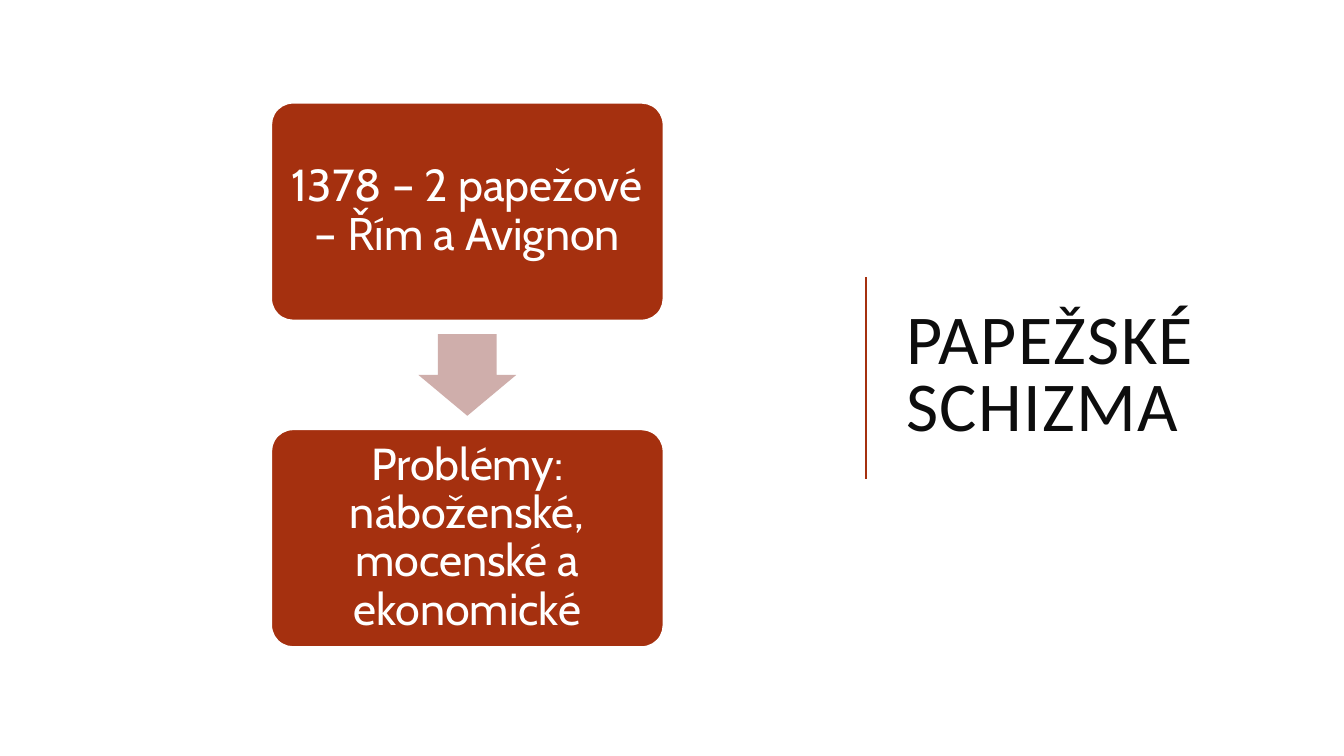
import dataclasses
import pptx
import pptx.util
import pptx.dml.color
import pptx.enum.shapes
import pptx.enum.text
import pptx.oxml.ns
import lxml.etree

Inches = pptx.util.Inches
Pt = pptx.util.Pt
Shape = pptx.enum.shapes.MSO_SHAPE
Align = pptx.enum.text.PP_ALIGN
Anchor = pptx.enum.text.MSO_ANCHOR


@dataclasses.dataclass(frozen=True)
class Theme:
    rust: str = "A5300F"
    rose: str = "CFAEAB"
    white: str = "FFFFFF"
    ink: str = "0D0D0D"
    head: str = "Calibri"
    body: str = "Cabin"
    big: int = 50
    mid: int = 32


def shade(text):
    return pptx.dml.color.RGBColor.from_string(text)


def apply(item, form):
    for name, value in form.items():
        setattr(item, name, value)


class Deck:
    def __init__(self, theme):
        self.theme = theme
        self.file = pptx.Presentation()
        apply(self.file, {"slide_width": Inches(13.33), "slide_height": Inches(7.5)})
        self.slide = self.file.slides.add_slide(self.file.slide_layouts[5])

    def label(self, shape, text, font, size, color, align, space, inset):
        frame = shape.text_frame
        frame.text = text
        apply(frame, {"word_wrap": True, "vertical_anchor": Anchor.MIDDLE,
                      "auto_size": pptx.enum.text.MSO_AUTO_SIZE.NONE})
        apply(frame, {f"margin_{side}": Inches(gap) for side, gap in inset.items()})
        para = frame.paragraphs[0]
        apply(para, {"alignment": align, "line_spacing": space})
        run = para.runs[0]
        apply(run.font, {"name": font, "size": Pt(size)})
        run.font.color.rgb = shade(color)
        return run

    def title(self, text, x, y, w, h):
        shape = self.slide.shapes.title
        apply(shape, {"left": Inches(x), "top": Inches(y),
                      "width": Inches(w), "height": Inches(h)})
        look = self.theme
        inset = {"left": 0.1, "right": 0.1, "top": 0.05, "bottom": 0.05}
        run = self.label(shape, text, look.head, look.big, look.ink,
                         Align.LEFT, 0.8, inset)
        run._r.get_or_add_rPr().set("spc", "100")

    def rule(self, x, start, end):
        line = self.slide.shapes.add_connector(
            pptx.enum.shapes.MSO_CONNECTOR.STRAIGHT,
            Inches(x), Inches(start), Inches(x), Inches(end))
        line.line.color.rgb = shade(self.theme.rust)
        line.line.width = Pt(1.5)
        lxml.etree.SubElement(line._element.spPr, pptx.oxml.ns.qn("a:effectLst"))

    def shape(self, kind, x, y, w, h, fill, bends):
        shape = self.slide.shapes.add_shape(
            kind, Inches(x), Inches(y), Inches(w), Inches(h))
        shape.shadow.inherit = False
        shape.fill.solid()
        shape.fill.fore_color.rgb = shade(fill)
        for spot, bend in enumerate(bends):
            shape.adjustments[spot] = bend
        return shape

    def card(self, text, x, y, w, h):
        look = self.theme
        shape = self.shape(Shape.ROUNDED_RECTANGLE, x, y, w, h, look.rust, [0.1])
        shape.line.color.rgb = shade(look.white)
        shape.line.width = Pt(1.25)
        inset = dict.fromkeys(["left", "right", "top", "bottom"], 0.13)
        self.label(shape, text, look.body, look.mid, look.white,
                   Align.CENTER, 0.9, inset)

    def arrow(self, x, y, w, h):
        shape = self.shape(Shape.RIGHT_ARROW, x, y, w, h, self.theme.rose, [0.6, 0.5])
        shape.rotation = 90
        shape.line.fill.background()


def main():
    deck = Deck(Theme())
    deck.title("PAPEŽSKÉ SCHIZMA", 8.89, 0.7, 3.8, 6.09)
    deck.rule(8.59, 4.75, 2.75)
    left, top, wide, high, step = 2.69, 1.02, 3.89, 2.16, 3.24
    cards = ["1378 – 2 papežové – Řím a Avignon",
             "Problémy: náboženské, mocenské a ekonomické"]
    for spot, text in enumerate(cards):
        deck.card(text, left, top + spot * step, wide, high)
    long, broad = 0.81, 0.97
    deck.arrow(left + (wide - long) / 2, top + (high + step - broad) / 2, long, broad)
    deck.file.save("out.pptx")


if __name__ == "__main__":
    main()
